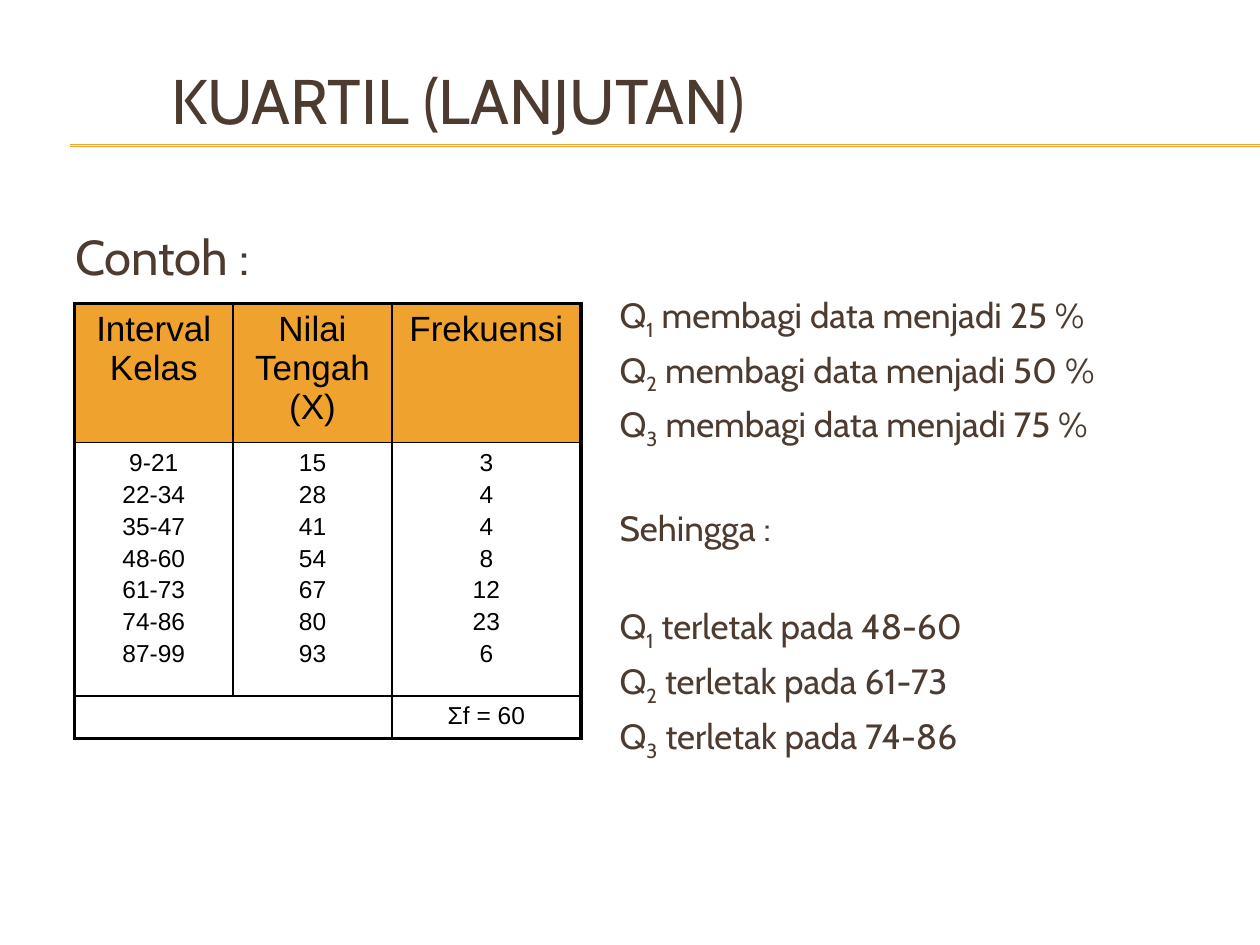
from dataclasses import dataclass
from typing import Any

import lxml.etree
import pptx
import pptx.dml.color
import pptx.enum.shapes
import pptx.enum.text
import pptx.oxml.ns
import pptx.util

Cm = pptx.util.Cm
Pt = pptx.util.Pt
qn = pptx.oxml.ns.qn

COLORS = {"brown": "4E3B30", "orange": "F0A22E", "black": "000000"}
CENTER = pptx.enum.text.PP_ALIGN.CENTER
TOP = pptx.enum.text.MSO_ANCHOR.TOP
MIDDLE = pptx.enum.text.MSO_ANCHOR.MIDDLE


@dataclass
class Line:
    text: str
    subscript: str = ""
    rest: str = ""
    space_before: float = 0


@dataclass
class TextBlock:
    left: float
    top: float
    width: float
    height: float
    size: float
    lines: list[Line]
    anchor: Any = TOP


@dataclass
class TableRow:
    height: float
    size: float
    cells: list[list[str]]
    fill: str = ""


SHARES = ["25 %", "50 %", "75 %"]
CLASSES = ["48-60", "61-73", "74-86"]


def quartile_lines(phrase: str, values: list[str], gap: float) -> list[Line]:
    """One line per quartile; the first is set off by the given gap."""
    return [
        Line("Q", str(number), f" {phrase} {value}", gap if number == 1 else 4)
        for number, value in enumerate(values, start=1)
    ]


BLOCKS = [
    TextBlock(3.2, 0.64, 20.5, 2.74, 36, [Line("KUARTIL (LANJUTAN)")], MIDDLE),
    TextBlock(1.27, 4.45, 10, 1.4, 28, [Line("Contoh :")]),
    TextBlock(
        12.24, 5.79, 12.3, 10, 20,
        quartile_lines("membagi data menjadi", SHARES, 0)
        + [Line("Sehingga :", space_before=32)]
        + quartile_lines("terletak pada", CLASSES, 32),
    ),
]

COLUMN_WIDTHS = [3.2, 3.2, 3.81]
ROWS = [
    TableRow(2.79, 20, [["Interval Kelas"], ["Nilai Tengah (X)"], ["Frekuensi"]], "orange"),
    TableRow(5.11, 14, [
        ["9-21", "22-34", "35-47", "48-60", "61-73", "74-86", "87-99"],
        ["15", "28", "41", "54", "67", "80", "93"],
        ["3", "4", "4", "8", "12", "23", "6"],
    ]),
    TableRow(0.84, 14, [[], [], ["Σf = 60"]]),
]


def apply_format(target: Any, values: dict[str, Any]) -> None:
    for name, value in values.items():
        setattr(target, name, value)


def rgb(color: str) -> pptx.dml.color.RGBColor:
    return pptx.dml.color.RGBColor.from_string(COLORS[color])


def add_run(paragraph: Any, text: str, font: str, size: float, color: str) -> Any:
    run = paragraph.add_run()
    run.text = text
    apply_format(run.font, {"name": font, "size": Pt(size)})
    run.font.color.rgb = rgb(color)
    return run


def add_rule(slide: Any, top: float) -> None:
    rule = slide.shapes.add_connector(
        pptx.enum.shapes.MSO_CONNECTOR.STRAIGHT, Cm(1.42), Cm(top), Cm(25.4), Cm(top)
    )
    rule.line.color.rgb = rgb("orange")
    rule.line.width = Pt(0.75)
    lxml.etree.SubElement(rule._element.spPr, qn("a:effectLst"))


def add_text_block(slide: Any, block: TextBlock) -> None:
    shape = slide.shapes.add_textbox(
        Cm(block.left), Cm(block.top), Cm(block.width), Cm(block.height)
    )
    frame = shape.text_frame
    apply_format(frame, {"word_wrap": True, "vertical_anchor": block.anchor})
    for index, line in enumerate(block.lines):
        paragraph = frame.add_paragraph() if index else frame.paragraphs[0]
        paragraph.space_before = Pt(line.space_before)
        for text in filter(None, (line.text, line.subscript, line.rest)):
            run = add_run(paragraph, text, "Cabin", block.size, "brown")
            if text == line.subscript:
                run.font._element.set("baseline", "-25000")


def set_borders(cell: Any, widths: dict[str, float]) -> None:
    properties = cell._tc.get_or_add_tcPr()
    for side, width in widths.items():
        border = lxml.etree.SubElement(properties, qn(f"a:ln{side}"), w=str(Pt(width)))
        fill = lxml.etree.SubElement(border, qn("a:solidFill"))
        lxml.etree.SubElement(fill, qn("a:srgbClr"), val=COLORS["black"])


def fill_cell(cell: Any, row: TableRow, texts: list[str]) -> None:
    if row.fill:
        cell.fill.solid()
        cell.fill.fore_color.rgb = rgb(row.fill)
    else:
        cell.fill.background()
    margin = Cm(0.13) if texts else 0
    apply_format(cell, {
        "margin_left": Cm(0.25), "margin_right": Cm(0.25),
        "margin_top": margin, "margin_bottom": margin, "vertical_anchor": TOP,
    })
    for index, text in enumerate(texts):
        frame = cell.text_frame
        paragraph = frame.add_paragraph() if index else frame.paragraphs[0]
        apply_format(paragraph, {
            "alignment": CENTER, "space_before": Pt(2.5 if index else 0),
        })
        add_run(paragraph, text, "Arial", row.size, "black")


def add_frequency_table(slide: Any) -> None:
    last_row, last_column = len(ROWS) - 1, len(COLUMN_WIDTHS) - 1
    table = slide.shapes.add_table(
        len(ROWS), len(COLUMN_WIDTHS), Cm(1.5), Cm(6.12),
        Cm(sum(COLUMN_WIDTHS)), Cm(sum(row.height for row in ROWS)),
    ).table
    apply_format(table, {"first_row": False, "horz_banding": False})
    for column, width in zip(table.columns, COLUMN_WIDTHS):
        column.width = Cm(width)
    for row_index, row in enumerate(ROWS):
        table.rows[row_index].height = Cm(row.height)
        for column_index, texts in enumerate(row.cells):
            cell = table.cell(row_index, column_index)
            # Thick outer frame, thin inner grid
            outer = {
                "L": column_index == 0, "R": column_index == last_column,
                "T": row_index == 0, "B": row_index == last_row,
            }
            set_borders(cell, {side: 2.25 if edge else 1 for side, edge in outer.items()})
            fill_cell(cell, row, texts)
    table.cell(last_row, 0).merge(table.cell(last_row, 1))


def main() -> None:
    presentation = pptx.Presentation()
    apply_format(presentation, {"slide_width": Cm(25.4), "slide_height": Cm(19.05)})
    slide = presentation.slides.add_slide(presentation.slide_layouts[6])

    # Double rule under the title
    for top in (2.92, 2.95):
        add_rule(slide, top)

    # Title, heading and quartile notes
    for block in BLOCKS:
        add_text_block(slide, block)

    # Frequency distribution
    add_frequency_table(slide)

    presentation.save("out.pptx")


if __name__ == "__main__":
    main()
